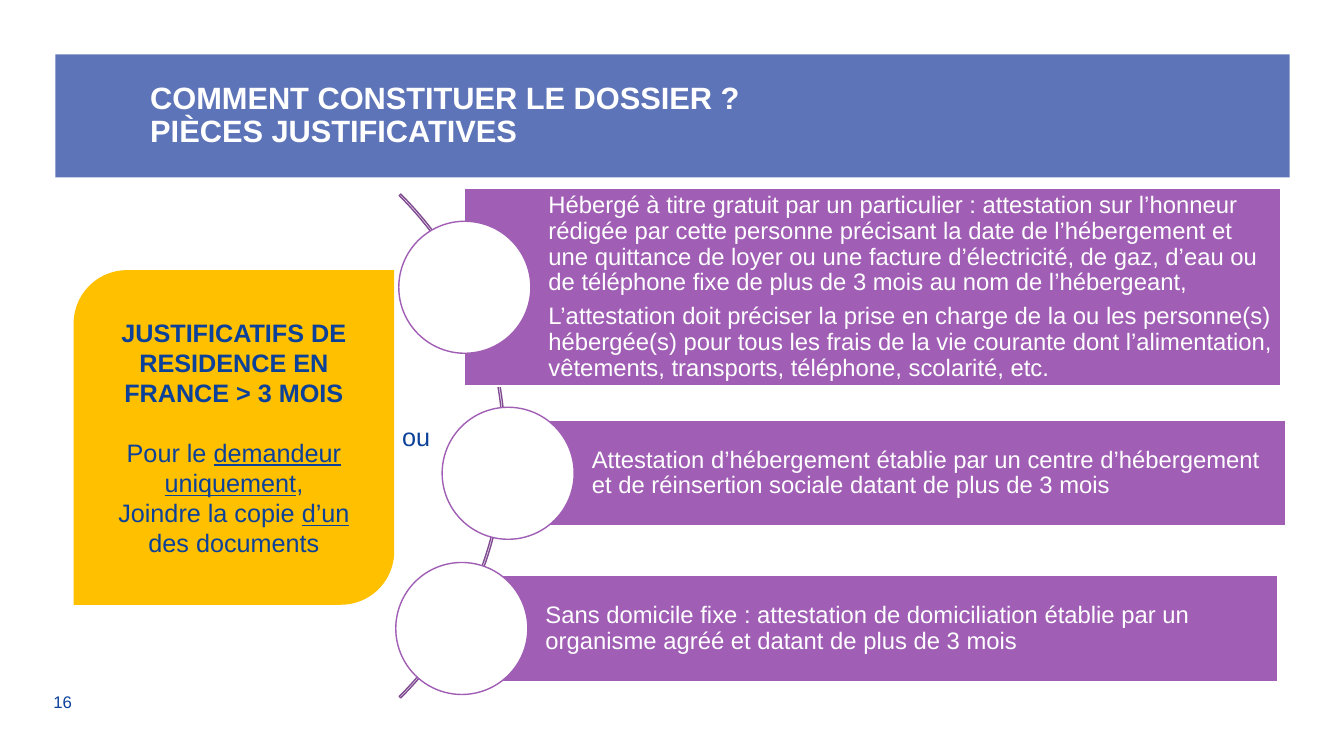
import pptx
import pptx.dml.color
import pptx.enum.shapes
import pptx.enum.text
import pptx.util

PX = 9144
NAVY, WHITE, PURPLE = "0C419A", "FFFFFF", "A05EB5"
SHAPE = pptx.enum.shapes.MSO_SHAPE
ALIGN = pptx.enum.text.PP_ALIGN
MIDDLE = pptx.enum.text.MSO_ANCHOR.MIDDLE


def px(n):
    return pptx.util.Emu(round(n * PX))


def rgb(hex_color):
    return pptx.dml.color.RGBColor.from_string(hex_color)


def place(sp, box):
    sp.left, sp.top, sp.width, sp.height = [px(n) for n in box]


def frame(sp, insets, anchor=MIDDLE):
    tf = sp.text_frame
    tf.word_wrap = True
    tf.auto_size = pptx.enum.text.MSO_AUTO_SIZE.NONE
    tf.vertical_anchor = anchor
    tf.margin_left, tf.margin_top, tf.margin_right, tf.margin_bottom = [px(n) for n in insets]
    return tf


def add_run(p, text, size, color, bold=False, underline=False):
    r = p.add_run()
    r.text = text
    r.font.name = "Arial"
    r.font.size = pptx.util.Pt(size)
    r.font.color.rgb = rgb(color)
    r.font.bold = bold
    r.font.underline = underline


def add_paragraph(tf, first, align=ALIGN.LEFT):
    p = tf.paragraphs[0] if first else tf.add_paragraph()
    p.alignment = align
    return p


def add_shape(slide, kind, box, fill=None, line=None):
    sp = slide.shapes.add_shape(kind, *[px(n) for n in box])
    sp.shadow.inherit = False
    if fill:
        sp.fill.solid()
        sp.fill.fore_color.rgb = rgb(fill)
    else:
        sp.fill.background()
    if line:
        sp.line.color.rgb = rgb(line)
        sp.line.width = pptx.util.Pt(1)
    else:
        sp.line.fill.background()
    return sp


def add_title(slide, box, lines):
    sp = slide.shapes.title
    place(sp, box)
    sp.fill.solid()
    sp.fill.fore_color.rgb = rgb("5E74B8")
    p = add_paragraph(frame(sp, (94, 8, 8, 8)), True)
    p.line_spacing = 0.9
    for i, text in enumerate(lines):
        if i:
            p.add_line_break()
        add_run(p, text, 22, WHITE, bold=True)


def add_label(slide, box, text, size, anchor):
    sp = slide.shapes.add_textbox(*[px(n) for n in box])
    p = add_paragraph(frame(sp, (10, 5, 10, 5), anchor), True)
    add_run(p, text, size, NAVY)


def add_option(slide, box, paragraphs):
    left, top, width, height = box
    bar = add_shape(slide, SHAPE.RECTANGLE, box, PURPLE, WHITE)
    tf = frame(bar, (83, 5, 5, 5))
    for i, text in enumerate(paragraphs):
        p = add_paragraph(tf, i == 0)
        p.line_spacing = 0.9
        p.space_after = pptx.util.Pt(6)
        add_run(p, text, 17, WHITE)
    d = 131
    circle = (left - d / 2, top + (height - d) / 2, d, d)
    add_shape(slide, SHAPE.OVAL, circle, WHITE, PURPLE)


def add_options(slide, box, options):
    left, top, size, _ = box
    arc = add_shape(slide, SHAPE.BLOCK_ARC, box, line="804B91")
    for i, value in enumerate((189, 27, 0.003)):
        arc.adjustments[i] = value
    for dx, dy, width, height, paragraphs in options:
        add_option(slide, (left + dx, top + dy, width, height), paragraphs)


def add_card(slide, box, paragraphs):
    sp = add_shape(slide, SHAPE.ROUND_2_DIAG_RECTANGLE, box, "FFC000")
    tf = frame(sp, (10, 5, 10, 5))
    for i, (gap, bold, runs) in enumerate(paragraphs):
        p = add_paragraph(tf, i == 0, ALIGN.CENTER)
        if gap:
            p.space_before = pptx.util.Pt(gap)
        for text, underline in runs:
            add_run(p, text, 18, NAVY, bold, underline)


OPTIONS = [
    (667, 98, 809, 196, [
        "Hébergé à titre gratuit par un particulier : attestation sur l’honneur rédigée par cette "
        "personne précisant la date de l’hébergement et une quittance de loyer ou une facture "
        "d’électricité, de gaz, d’eau ou de téléphone fixe de plus de 3 mois au nom de l’hébergeant,",
        "L’attestation doit préciser la prise en charge de la ou les personne(s) hébergée(s) pour "
        "tous les frais de la vie courante dont l’alimentation, vêtements, transports, téléphone, "
        "scolarité, etc."]),
    (710, 328, 771, 105, [
        "Attestation d’hébergement établie par un centre d’hébergement et de réinsertion sociale "
        "datant de plus de 3 mois"]),
    (664, 482, 809, 105, [
        "Sans domicile fixe : attestation de domiciliation établie par un organisme agréé et "
        "datant de plus de 3 mois"]),
]

CARD = [
    (0, True, [("JUSTIFICATIFS DE RESIDENCE EN FRANCE > 3 MOIS", False)]),
    (21, False, [("Pour le ", False), ("demandeur uniquement", True), (",", False)]),
    (0, False, [("Joindre la copie ", False), ("d’un ", True), ("des documents", False)]),
]


def main():
    prs = pptx.Presentation()
    prs.slide_width, prs.slide_height = px(1333), px(750)
    slide = prs.slides.add_slide(prs.slide_layouts[5])
    add_label(slide, (43, 681, 79, 31), "16", 12, MIDDLE)
    add_title(slide, (55, 54, 1224, 122), ["COMMENT CONSTITUER LE DOSSIER ?", "PIÈCES JUSTIFICATIVES"])
    add_options(slide, (-206, 89, 707, 707), OPTIONS)
    add_card(slide, (73, 268, 318, 332), CARD)
    add_label(slide, (389, 413, 71, 40), "ou", 18, pptx.enum.text.MSO_ANCHOR.TOP)
    prs.save("out.pptx")


if __name__ == "__main__":
    main()
